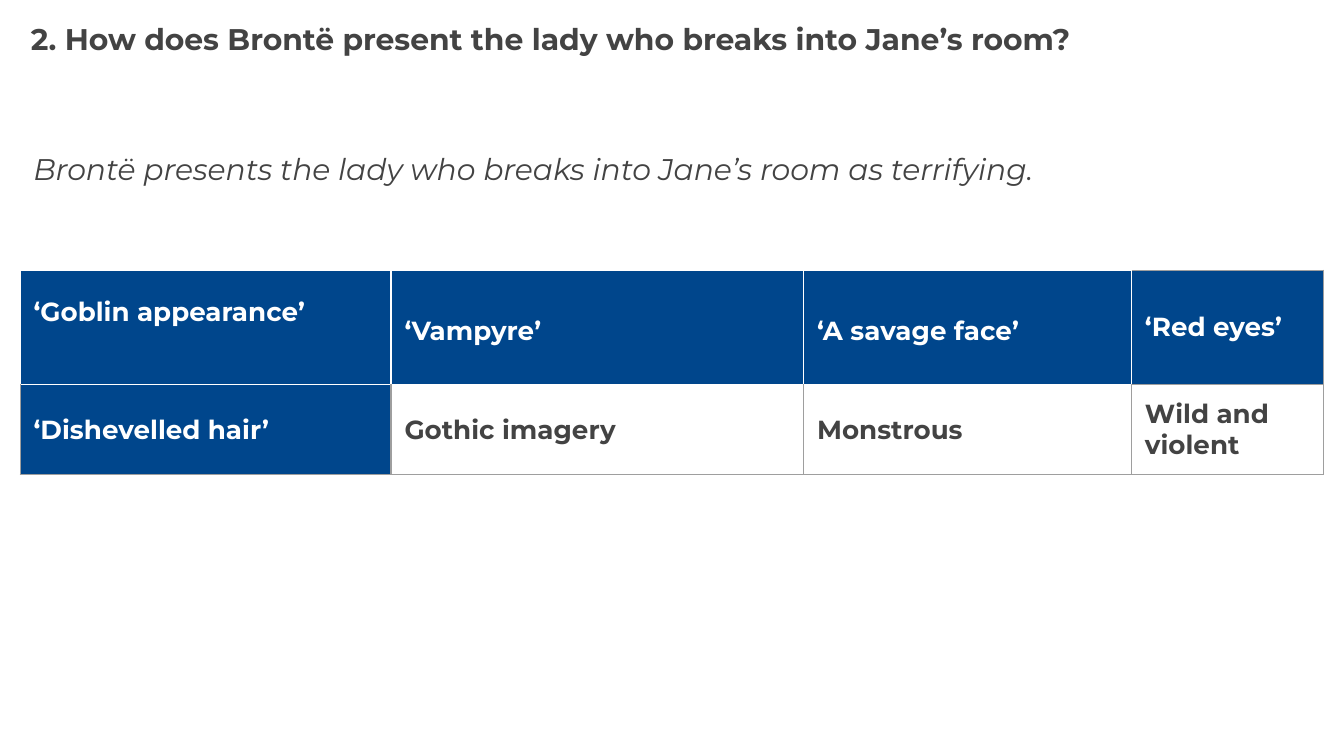
from lxml import etree
from pptx import Presentation
from pptx.dml.color import RGBColor
from pptx.enum.text import MSO_ANCHOR, PP_ALIGN
from pptx.oxml.ns import qn
from pptx.util import Inches, Pt

TOP, MIDDLE, LEFT = MSO_ANCHOR.TOP, MSO_ANCHOR.MIDDLE, PP_ALIGN.LEFT
FONT = "Montserrat"
COLORS = {"text": "434343", "blue": "00468C", "white": "FFFFFF", "grey": "9E9E9E"}
SLIDE_WIDTH = 10

# Content
QUESTION = "2. How does Brontë present the lady who breaks into Jane’s room?"
ANSWER = "Brontë presents the lady who breaks into Jane’s room as terrifying."
COL_WIDTHS = [2.76, 3.07, 2.44, 1.43]
ROW_HEIGHTS = [0.85, 0.67]
# Each cell: text, is it a blue quotation, border colours (left, top, right, bottom)
WHITE_EDGES = ["white"] * 4
UNDER_QUOTE = ["grey", "white", "grey", "grey"]
CELLS = [
    [("‘Goblin appearance’", True, WHITE_EDGES),
     ("‘Vampyre’", True, WHITE_EDGES),
     ("‘A savage face’", True, WHITE_EDGES),
     ("‘Red eyes’", True, ["white", "grey", "grey", "grey"])],
    [("‘Dishevelled hair’", True, UNDER_QUOTE),
     ("Gothic imagery", False, UNDER_QUOTE),
     ("Monstrous", False, UNDER_QUOTE),
     ("Wild and violent", False, ["grey"] * 4)],
]
SPACED = {"‘Vampyre’", "‘A savage face’"}


def add_text(p, text, size, color, bold=False, italic=False):
    p.alignment = LEFT
    r = p.add_run()
    r.text = text
    r.font.name, r.font.size = FONT, Pt(size)
    r.font.bold, r.font.italic = bold, italic
    r.font.color.rgb = RGBColor.from_string(COLORS[color])


def set_insets(obj):
    obj.margin_left = obj.margin_top = obj.margin_right = obj.margin_bottom = Inches(0.1)


def set_borders(cell, edges):
    tcPr = cell._tc.get_or_add_tcPr()
    for i, (side, color) in enumerate(zip("LRTB", [edges[k] for k in (0, 2, 1, 3)])):
        ln = etree.Element(qn(f"a:ln{side}"), w=str(Pt(0.75)))
        fill = etree.SubElement(ln, qn("a:solidFill"))
        etree.SubElement(fill, qn("a:srgbClr"), val=COLORS[color])
        tcPr.insert(i, ln)


def place_text(sp, box, text, **style):
    sp.left, sp.top, sp.width, sp.height = map(Inches, box)
    tf = sp.text_frame
    tf.word_wrap = True
    tf.vertical_anchor = TOP
    set_insets(tf)
    add_text(tf.paragraphs[0], text, 16, "text", **style)


prs = Presentation()
prs.slide_width = Inches(SLIDE_WIDTH)
prs.slide_height = Inches(SLIDE_WIDTH * 9 / 16)
s = prs.slides.add_slide(prs.slide_layouts[5])

# Question
place_text(s.shapes.title, (0.13, 0.05, 8.53, 1.04), QUESTION, bold=True)

# Quotations and what they suggest
frame = s.shapes.add_table(len(ROW_HEIGHTS), len(COL_WIDTHS), Inches(0.15), Inches(2.01),
                           Inches(sum(COL_WIDTHS)), Inches(sum(ROW_HEIGHTS)))
table = frame.table
table.first_row = table.horz_banding = False
for col, width in zip(table.columns, COL_WIDTHS):
    col.width = Inches(width)
for row, height, cells in zip(table.rows, ROW_HEIGHTS, CELLS):
    row.height = Inches(height)
    for cell, (text, is_quote, edges) in zip(row.cells, cells):
        cell.vertical_anchor = MIDDLE
        set_insets(cell)
        cell.fill.solid()
        cell.fill.fore_color.rgb = RGBColor.from_string(COLORS["blue" if is_quote else "white"])
        set_borders(cell, edges)
        p = cell.text_frame.paragraphs[0]
        if text in SPACED:
            p.line_spacing = 1.15
            p.space_after = Pt(12)
        add_text(p, text, 14, "white" if is_quote else "text", bold=True)

# The first quotation sits above the middle of its cell, the spaced ones just below
table.cell(0, 0).margin_bottom = Inches(0.32)
for c in (1, 2):
    table.cell(0, c).margin_top = Inches(0.12)

# Opening sentence of the answer
answer = s.shapes.add_textbox(0, 0, 0, 0)
place_text(answer, (0.15, 1.02, 9.8, 0.79), ANSWER, italic=True)

prs.save("out.pptx")
